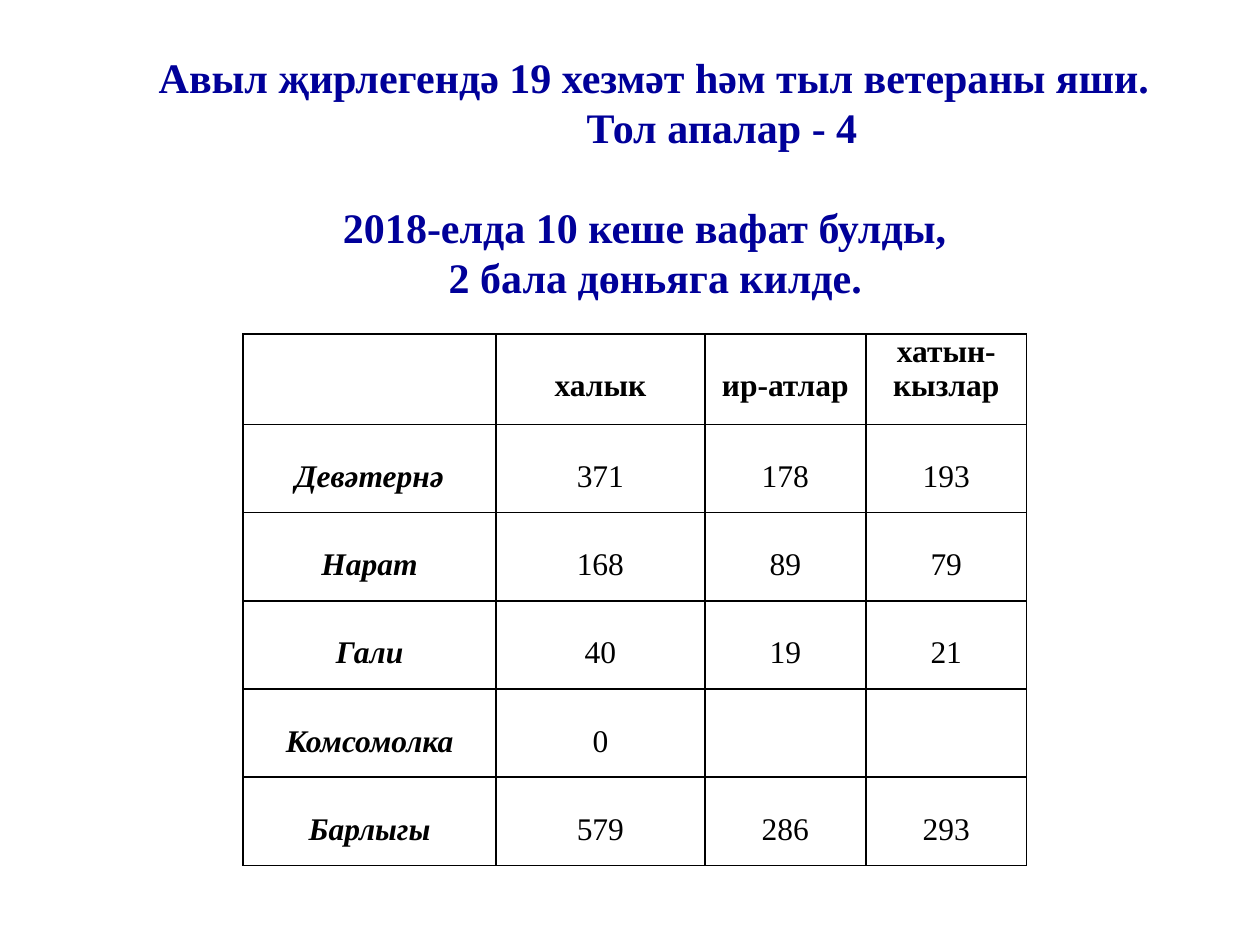
import pptx
import pptx.util
import pptx.dml.color
import pptx.enum.text
import pptx.oxml.ns
import lxml.etree

COLORS = {"title": "000099", "text": "000000", "border": "000000"}
FONT = "Times New Roman"
GRID_COLS, GRID_ROWS = 100, 75
COL_WEIGHTS = [2.01, 1.66, 1.28, 1.28]
ROW_WEIGHTS = [0.72] + [0.7] * 5
HEADINGS = [
    ("Авыл җирлегендә 19 хезмәт һәм тыл ветераны яши.", 0, 0.17),
    ("Тол апалар - 4", 0.91, 0),
]
EVENTS = [
    ("2018-елда 10 кеше вафат булды,", 0, 0.17),
    ("2 бала дөньяга килде.", 0, 0),
]
POPULATION = [
    ["", "халык", "ир-атлар", "хатын-кызлар"],
    ["Девәтернә", "371", "178", "193"],
    ["Нарат", "168", "89", "79"],
    ["Гали", "40", "19", "21"],
    ["Комсомолка", "0", "", ""],
    ["Барлыгы", "579", "286", "293"],
]


def grid_box(prs, col, row, cols, rows):
    """Turn grid columns and rows into left, top, width and height."""
    unit_x, unit_y = prs.slide_width / GRID_COLS, prs.slide_height / GRID_ROWS
    return [int(v) for v in (col * unit_x, row * unit_y, cols * unit_x, rows * unit_y)]


def write(p, text, size=18, color="text", bold=False, italic=False,
          spacing=1.0, left=0, right=0):
    """Write centred text with its format into a paragraph."""
    p.alignment = pptx.enum.text.PP_ALIGN.CENTER
    p.line_spacing = spacing
    pPr = p._p.get_or_add_pPr()
    pPr.set("marL", str(pptx.util.Inches(left)))
    pPr.set("marR", str(pptx.util.Inches(right)))
    r = p.add_run()
    r.text = text
    r.font.name, r.font.size = FONT, pptx.util.Pt(size)
    r.font.bold, r.font.italic = bold, italic
    r.font.color.rgb = pptx.dml.color.RGBColor.from_string(COLORS[color])


def add_statement(s, box, lines):
    """Add a block of bold centred lines."""
    tf = s.shapes.add_textbox(*box).text_frame
    tf.word_wrap = True
    for i, (text, left, right) in enumerate(lines):
        p = tf.add_paragraph() if i else tf.paragraphs[0]
        write(p, text, size=24, color="title", bold=True, left=left, right=right)


def set_borders(cell):
    """Draw a thin line on every side of a cell."""
    tcPr = cell._tc.get_or_add_tcPr()
    qn = pptx.oxml.ns.qn
    for i, side in enumerate(("a:lnL", "a:lnR", "a:lnT", "a:lnB")):
        ln = lxml.etree.Element(qn(side), w=str(pptx.util.Pt(1)))
        fill = lxml.etree.SubElement(ln, qn("a:solidFill"))
        lxml.etree.SubElement(fill, qn("a:srgbClr"), val=COLORS["border"])
        tcPr.insert(i, ln)


def add_population_table(s, box, rows):
    """Add the table of residents by village."""
    table = s.shapes.add_table(len(rows), len(rows[0]), *box).table
    table.first_row = table.horz_banding = False
    for column, weight in zip(table.columns, COL_WEIGHTS):
        column.width = int(box[2] * weight / sum(COL_WEIGHTS))
    for row, weight in zip(table.rows, ROW_WEIGHTS):
        row.height = int(box[3] * weight / sum(ROW_WEIGHTS))
    for i, values in enumerate(rows):
        for j, text in enumerate(values):
            cell = table.cell(i, j)
            cell.margin_left = cell.margin_right = pptx.util.Inches(0.07)
            cell.margin_top = cell.margin_bottom = 0
            cell.fill.background()
            set_borders(cell)
            if text:
                wraps = i == 0 and j == len(values) - 1
                write(cell.text_frame.paragraphs[0], text, bold=i == 0 or j == 0,
                      italic=j == 0, spacing=1.0 if wraps else 2.0)


def main():
    """Build and save the slide."""
    prs = pptx.Presentation()
    prs.slide_width, prs.slide_height = pptx.util.Inches(10), pptx.util.Inches(7.5)
    s = prs.slides.add_slide(prs.slide_layouts[6])
    add_statement(s, grid_box(prs, 11.4, 3.6, 82.7, 9.1), HEADINGS)
    add_statement(s, grid_box(prs, 15.4, 15.5, 73.2, 9.1), EVENTS)
    add_population_table(s, grid_box(prs, 19.3, 26.5, 62.2, 42.2), POPULATION)
    prs.save("out.pptx")


if __name__ == "__main__":
    main()
